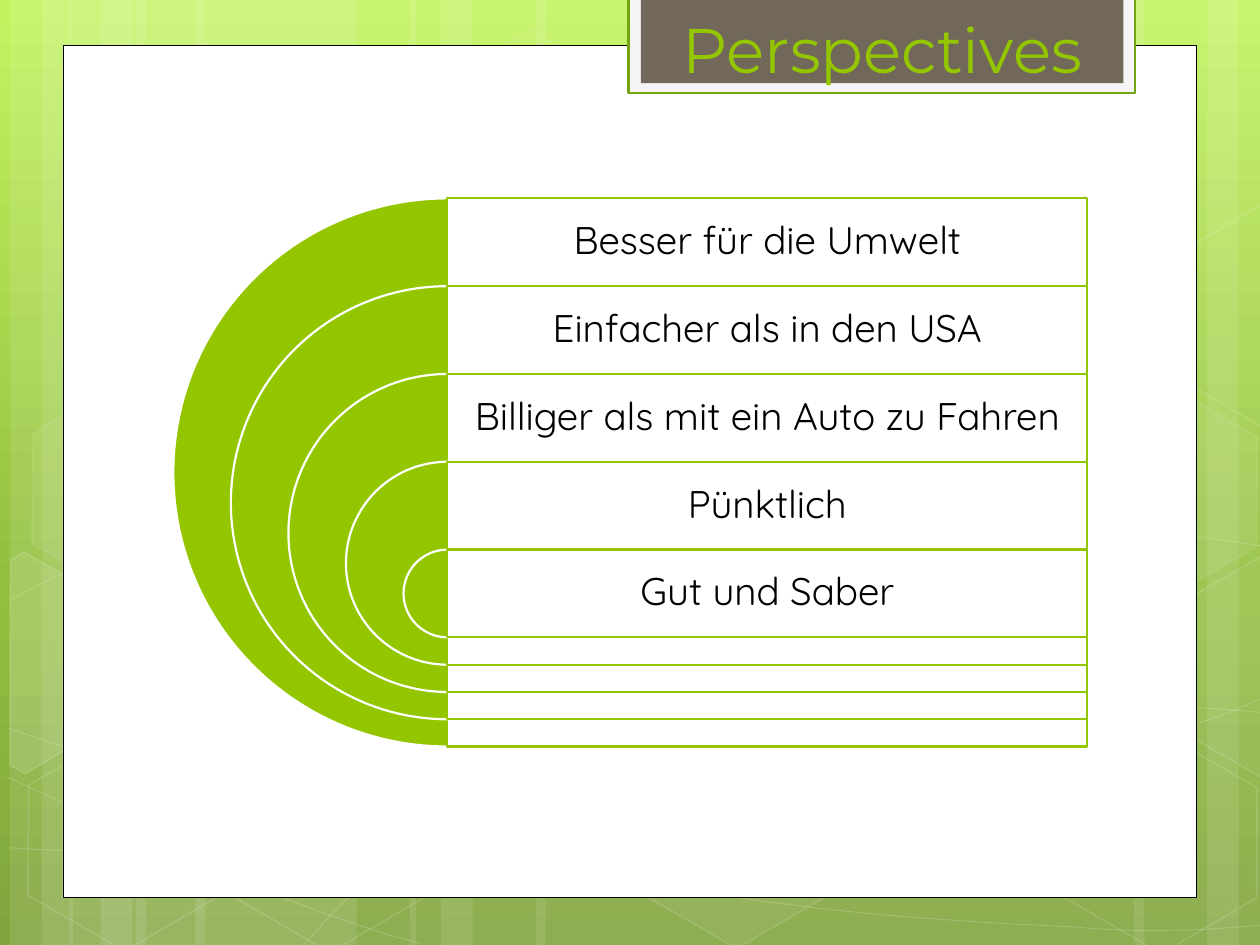
from copy import deepcopy
from dataclasses import dataclass
from typing import NamedTuple, Optional

from lxml.etree import SubElement
from pptx import Presentation
from pptx.dml.color import RGBColor
from pptx.enum.shapes import MSO_SHAPE as Preset
from pptx.enum.text import MSO_ANCHOR as Anchor, PP_ALIGN as Align
from pptx.oxml.ns import qn
from pptx.util import Cm, Pt


@dataclass(frozen=True)
class Theme:
    accent: str = "94C600"
    frame: str = "74A510"
    banner: str = "71685A"
    pale: str = "F5F5F5"
    white: str = "FFFFFF"
    black: str = "000000"
    backdrop: tuple = ((0, "C3F35F"), (0.62, "93BF3F"), (1, "81A53E"))
    title_font: str = "Montserrat"
    body_font: str = "Quicksand"
    title_size: int = 36
    body_size: int = 22


class Paint(NamedTuple):
    color: str
    opacity: int = 100
    width: float = 1.25


class Box(NamedTuple):
    left: float
    top: float
    width: float
    height: float

    def lengths(self) -> list:
        return [Cm(side) for side in self]


class Hexagon(NamedTuple):
    left: float
    top: float
    fill: int
    line: int


THEME = Theme()
SLIDE_WIDTH, SLIDE_HEIGHT = 25.4, 19.05
TILT = 30

BANDS = [
    (2.74, 4.45), (0.2, 1.27), (0.84, 2.11), (3.94, 4.45), (1.4, 1.27), (2.03, 2.11),
    (18.62, 4.45), (24.33, 1.27), (22.86, 2.11), (10.8, 7.82), (8.26, 1.27), (8.89, 2.11),
]
CURVES = [
    [(0.18, 17.09), (1.55, 17.17), (2.92, 17.25), (4.83, 17.22), (6.73, 17.2), (9.09, 17.15),
     (11.63, 16.89), (14.17, 16.64), (17.78, 16.15), (20.12, 15.67), (22.43, 15.19),
     (24.82, 14.43), (25.58, 14)],
    [(0.18, 12.12), (0.91, 11.71), (1.65, 11.33), (3.07, 10.95), (4.52, 10.57), (6.58, 10.01),
     (8.81, 9.83), (11.07, 9.65), (13.82, 9.63), (16.61, 9.83), (19.41, 10.03),
     (24.05, 10.82), (25.58, 11.02)],
    [(0.15, 15.67), (3.23, 17.07), (6.27, 18.47), (8.48, 19.02)],
    [(0.18, 14.68), (0.97, 14.96), (1.78, 15.24), (3.25, 15.65), (4.72, 16.03), (6.93, 16.66),
     (9.07, 17.09), (11.18, 17.53), (13.84, 17.98), (15.95, 18.24), (18.06, 18.52),
     (20.32, 18.62), (21.67, 18.69), (22.99, 18.8), (23.34, 18.75), (24, 18.75),
     (24.66, 18.72), (25.12, 18.67), (25.58, 18.64)],
    [(6.15, 19.02), (6.6, 18.52), (7.06, 18.01), (7.67, 17.55), (8.28, 17.09), (9.14, 16.59),
     (9.86, 16.23), (10.57, 15.88), (11, 15.72), (11.94, 15.47), (12.88, 15.22),
     (14.55, 14.86), (15.44, 14.68), (16.36, 14.5), (16.48, 14.5), (17.27, 14.45),
     (18.06, 14.38), (19.3, 14.3), (20.17, 14.27), (21.06, 14.25), (22.5, 14.27),
     (22.5, 14.27), (23.07, 14.27), (23.64, 14.27), (24.21, 14.27), (24.66, 14.3),
     (25.1, 14.33), (25.32, 14.35), (25.55, 14.38), (25.48, 14.35), (25.55, 14.38)],
]
HEXAGONS = [
    Hexagon(8.48, 0.91, 4, 8), Hexagon(12.62, 14.96, 6, 12), Hexagon(0.28, 15.01, 0, 12),
    Hexagon(0.36, 7.92, 7, 8), Hexagon(4.42, 15.04, 0, 12), Hexagon(19.13, 11.51, 10, 12),
    Hexagon(21.18, 15.06, 0, 12), Hexagon(21.18, 7.98, 7, 8),
]
LEFT_CUT = [(-0.84, 11.96), (-0.7, 11.67), (1.56, 11.66), (2.65, 13.61), (1.56, 15.53),
            (1.21, 15.53)]
RIGHT_CUT = [(23.28, 13.19), (24.37, 11.27), (24.61, 11.28), (26.73, 14.95), (26.63, 15.13),
             (24.4, 15.13)]
UPPER_CUT = [(x, y - 7.08) for x, y in RIGHT_CUT]
CUT_HEXAGONS = [(LEFT_CUT, 10), (RIGHT_CUT, 4), (UPPER_CUT, 0)]

PERSPECTIVES = ["Besser für die Umwelt", "Einfacher als in den USA",
                "Billiger als mit ein Auto zu Fahren", "Pünktlich", "Gut und Saber"]
STACK = Box(9.02, 4, 12.9, 11.05)
ROW_HEIGHT, RING_STEP = 1.77, 2.32


def apply_paint(shape, fill: Optional[Paint], line: Optional[Paint] = None) -> None:
    """Set fill, outline and their opacity, and drop the shadow."""
    shape.shadow.inherit = False
    for paint, target, route in ((fill, shape.fill, "a:solidFill/a:srgbClr"),
                                 (line, shape.line.fill, "a:ln/a:solidFill/a:srgbClr")):
        if paint is None or paint.opacity == 0:
            target.background()
            continue
        target.solid()
        target.fore_color.rgb = RGBColor.from_string(paint.color)
        if paint.opacity < 100:
            for color in shape._element.spPr.xpath(route):
                SubElement(color, qn("a:alpha")).set("val", str(paint.opacity * 1000))
    if line:
        shape.line.width = Pt(line.width)


def add_preset(slide, preset, box: Box, fill: Optional[Paint], line: Optional[Paint] = None,
               adjustments: tuple = (), rotation: float = 0) -> None:
    """Draw one preset shape."""
    shape = slide.shapes.add_shape(preset, *box.lengths())
    shape.rotation = rotation
    for index, value in enumerate(adjustments):
        shape.adjustments[index] = value
    apply_paint(shape, fill, line)


def add_outline(slide, points: list, close: bool):
    """Return a freeform through points given in centimetres."""
    corners = [(Cm(x), Cm(y)) for x, y in points]
    builder = slide.shapes.build_freeform(*corners[0])
    builder.add_line_segments(corners[1:], close=close)
    return builder.convert_to_shape()


def add_curve(slide, controls: list, line: Paint) -> None:
    """Draw a chain of cubic curves through its control points."""
    curve = add_outline(slide, controls, False)
    outline = curve._element.find(".//" + qn("a:path"))
    segments = outline.findall(qn("a:lnTo"))
    for start in range(0, len(segments), 3):
        cubic = SubElement(outline, qn("a:cubicBezTo"))
        for segment in segments[start:start + 3]:
            cubic.append(segment[0])
            outline.remove(segment)
    apply_paint(curve, None, line)


def write_text(frame, text: str, anchor, font: str, size: int, color: str) -> None:
    """Write one centred line into a text frame."""
    frame.word_wrap = True
    frame.vertical_anchor = anchor
    paragraph = frame.paragraphs[0]
    paragraph.alignment = Align.CENTER
    run = paragraph.add_run()
    run.text = text
    run.font.name = font
    run.font.size = Pt(size)
    run.font.color.rgb = RGBColor.from_string(color)


def draw_backdrop(slide) -> None:
    """Draw the bands, curves, hexagons, white page and title banner."""
    for left, width in BANDS:
        add_preset(slide, Preset.RECTANGLE, Box(left, 0, width, SLIDE_HEIGHT),
                   Paint(THEME.white, 10))
    for controls in CURVES:
        add_curve(slide, controls, Paint(THEME.white, 20, 0.5))
    for hexagon in HEXAGONS:
        add_preset(slide, Preset.HEXAGON, Box(hexagon.left, hexagon.top, 4.45, 3.86),
                   Paint(THEME.white, hexagon.fill), Paint(THEME.white, hexagon.line, 1),
                   (0.285, 1.155), TILT)
    for corners, opacity in CUT_HEXAGONS:
        cut = add_outline(slide, corners, True)
        cut.rotation = TILT
        apply_paint(cut, Paint(THEME.white, opacity), Paint(THEME.white, 12, 1))
    add_preset(slide, Preset.RECTANGLE, Box(1.27, 0.91, 22.86, 17.19),
               Paint(THEME.white), Paint(THEME.black, width=0.5))
    add_preset(slide, Preset.RECTANGLE, Box(12.67, -0.05, 10.21, 1.93),
               Paint(THEME.pale), Paint(THEME.frame))
    add_preset(slide, Preset.RECTANGLE, Box(12.92, -0.05, 9.73, 1.73), Paint(THEME.banner))


def move_to_layout(slide) -> None:
    """Hand the backdrop to the layout and give it the gradient."""
    layout = slide.slide_layout
    for shape in list(slide.shapes):
        if not shape.is_placeholder:
            layout.shapes._spTree.insert_element_before(shape._element, "p:extLst")
    fill = layout.background.fill
    fill.gradient()
    fill.gradient_angle = 270
    stop_list = layout._element.find(".//" + qn("a:gsLst"))
    stop_list.append(deepcopy(stop_list[-1]))
    for stop, (position, color) in zip(fill.gradient_stops, THEME.backdrop):
        stop.position = position
        stop.color.rgb = RGBColor.from_string(color)


def draw_title(slide) -> None:
    """Place and write the title."""
    title = slide.shapes.title
    title.left, title.top, title.width, title.height = Box(12.92, 0, 9.73, 1.87).lengths()
    write_text(title.text_frame, "Perspectives", Anchor.BOTTOM,
               THEME.title_font, THEME.title_size, THEME.accent)


def draw_perspectives(slide) -> None:
    """Draw the nested half discs with one labelled row each."""
    for index, perspective in enumerate(PERSPECTIVES):
        top = STACK.top + index * ROW_HEIGHT
        diameter = STACK.height - index * RING_STEP
        add_preset(slide, Preset.PIE, Box(STACK.left - diameter / 2, top, diameter, diameter),
                   Paint(THEME.accent), Paint(THEME.white), (54, 162))
        add_preset(slide, Preset.RECTANGLE, Box(STACK.left, top, STACK.width, diameter),
                   Paint(THEME.white, 90), Paint(THEME.accent))
        row = Box(STACK.left, top, STACK.width, ROW_HEIGHT)
        frame = slide.shapes.add_textbox(*row.lengths()).text_frame
        frame.margin_left = frame.margin_right = Cm(0.23)
        frame.margin_top = frame.margin_bottom = Cm(0.23)
        write_text(frame, perspective, Anchor.MIDDLE,
                   THEME.body_font, THEME.body_size, THEME.black)
        frame.paragraphs[0].line_spacing = 0.9


deck = Presentation()
deck.slide_width, deck.slide_height = Cm(SLIDE_WIDTH), Cm(SLIDE_HEIGHT)
perspectives_slide = deck.slides.add_slide(deck.slide_layouts[5])
draw_backdrop(perspectives_slide)
move_to_layout(perspectives_slide)
draw_title(perspectives_slide)
draw_perspectives(perspectives_slide)
deck.save("out.pptx")
